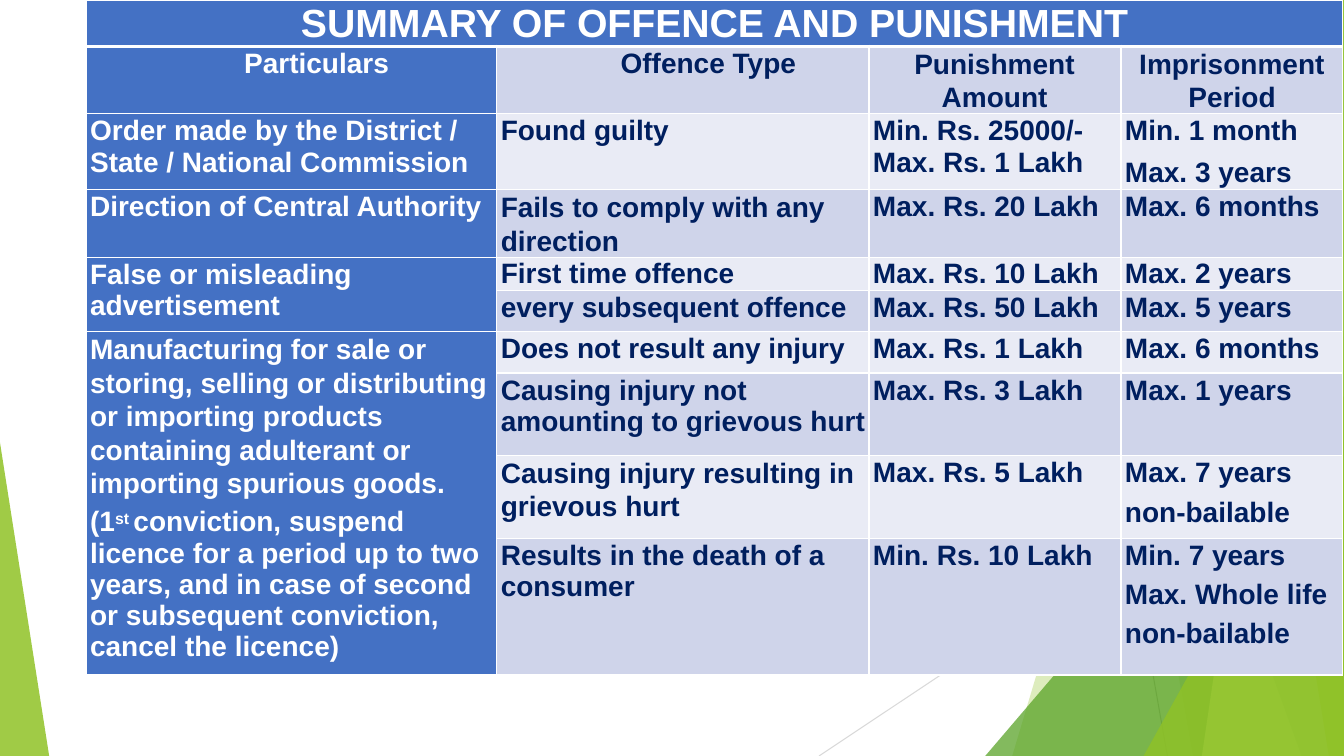
from dataclasses import dataclass

from pptx import Presentation
from pptx.dml.color import RGBColor
from pptx.enum.shapes import MSO_CONNECTOR, MSO_SHAPE
from pptx.enum.text import PP_ALIGN
from pptx.oxml.ns import qn
from pptx.util import Cm, Pt
from lxml.etree import SubElement

WHITE = RGBColor(0xFF, 0xFF, 0xFF)
BLUE = RGBColor(0x44, 0x71, 0xC4)
NAVY = RGBColor(0x00, 0x1F, 0x5F)
BAND_DARK = RGBColor(0xCF, 0xD4, 0xEA)
BAND_LIGHT = RGBColor(0xE9, 0xEB, 0xF5)
LIME = RGBColor(0x90, 0xC2, 0x26)
GREEN = RGBColor(0x54, 0xA0, 0x21)
FOREST = RGBColor(0x3F, 0x78, 0x19)
PALE_LIME = RGBColor(0xC0, 0xE4, 0x74)
GREY = RGBColor(0xBF, 0xBF, 0xBF)
LIGHT_GREY = RGBColor(0xD9, 0xD9, 0xD9)

SLIDE_WIDTH, SLIDE_HEIGHT = 33.87, 19.05
COLUMNS = (10.35, 9.38, 6.35, 5.59)
ROWS = (1.17, 1.7, 1.91, 1.7, 0.84, 1.04, 1.04, 2.08, 2.08, 3.45)
MERGES = ((0, 0, 0, 3), (4, 0, 5, 0), (6, 0, 9, 0))


@dataclass
class Line:
    text: str
    pitch: object = Pt(23.5)
    before: float = 0
    left: float = 0.1
    first: float = 0
    align: object = PP_ALIGN.LEFT
    size: float = 20
    raised: str = ""
    rest: str = ""


CONTENT = (
    ((Line("SUMMARY OF OFFENCE AND PUNISHMENT", Pt(32.4), left=0,
           align=PP_ALIGN.CENTER, size=28),), (), (), ()),
    ((Line("Particulars", left=1.27, align=PP_ALIGN.CENTER),),
     (Line("Offence Type", left=3.12),),
     (Line("Punishment Amount", Pt(24), left=1.83, first=-0.69),),
     (Line("Imprisonment Period", Pt(24), left=1.7, first=-1.24),)),
    ((Line("Order made by the District /"), Line("State / National Commission", 1.0)),
     (Line("Found guilty"),),
     (Line("Min. Rs. 25000/-"), Line("Max. Rs. 1 Lakh", 1.0)),
     (Line("Min. 1 month"), Line("Max. 3 years", before=6))),
    ((Line("Direction of Central Authority"),),
     (Line("Fails to comply with any direction", Pt(24)),),
     (Line("Max. Rs. 20 Lakh"),),
     (Line("Max. 6 months"),)),
    ((Line("False or misleading"), Line("advertisement", 1.0)),
     (Line("First time offence", Pt(23)),),
     (Line("Max. Rs. 10 Lakh", Pt(23)),),
     (Line("Max. 2 years", Pt(23)),)),
    ((), (Line("every subsequent offence"),), (Line("Max. Rs. 50 Lakh"),),
     (Line("Max. 5 years"),)),
    ((Line("Manufacturing for sale or storing, selling or distributing "
           "or importing products", Pt(24)),
      Line("containing adulterant or importing spurious goods.", Pt(24)),
      Line("(1", 1.0, before=4.7, raised="st ",
           rest="conviction, suspend licence for a period up to two years, and in case "
                "of second or subsequent conviction, cancel the licence)")),
     (Line("Does not result any injury"),),
     (Line("Max. Rs. 1 Lakh"),),
     (Line("Max. 6 months"),)),
    ((), (Line("Causing injury not"), Line("amounting to grievous hurt", 1.0)),
     (Line("Max. Rs. 3 Lakh"),), (Line("Max. 1 years"),)),
    ((), (Line("Causing injury resulting in grievous hurt", Pt(24)),),
     (Line("Max. Rs. 5 Lakh"),),
     (Line("Max. 7 years"), Line("non-bailable", 1.0, before=6))),
    ((), (Line("Results in the death of a"), Line("consumer", 1.0)),
     (Line("Min. Rs. 10 Lakh"),),
     (Line("Min. 7 years"), Line("Max. Whole life non-bailable", 1.25))),
)


def paint(shape, colour, opacity=100):
    shape.shadow.inherit = False
    shape.fill.solid()
    shape.fill.fore_color.rgb = colour
    shape.line.fill.background()
    if opacity < 100:
        tint = shape._element.spPr.find(".//" + qn("a:srgbClr"))
        SubElement(tint, qn("a:alpha")).set("val", str(opacity * 1000))


def add_triangle(page, left, top, width, height, apex, colour, opacity):
    triangle = page.shapes.add_shape(MSO_SHAPE.ISOSCELES_TRIANGLE, Cm(left), Cm(top),
                                     Cm(width), Cm(height))
    triangle.adjustments[0] = apex
    paint(triangle, colour, opacity)


def add_slab(page, right, top, height, upper, lower, colour, opacity):
    bottom = Cm(top + height)
    outline = page.shapes.build_freeform(Cm(right - upper), Cm(top))
    outline.add_line_segments([(Cm(right), Cm(top)), (Cm(right), bottom),
                               (Cm(right - lower), bottom)])
    paint(outline.convert_to_shape(), colour, opacity)


def add_hairline(page, start, end, colour):
    hairline = page.shapes.add_connector(MSO_CONNECTOR.STRAIGHT, *map(Cm, start + end))
    hairline.line.color.rgb = colour
    hairline.line.width = Pt(0.75)
    SubElement(hairline._element.spPr, qn("a:effectLst"))


def draw_facets(page, left, top, width, height):
    right, bottom = left + width, top + height
    add_hairline(page, (right - 7.82, top), (right - 4.45, bottom), GREY)
    add_hairline(page, (right, top + 10.24), (right - 13.23, bottom), LIGHT_GREY)
    facets = (
        ("slab", 2.67, 8.36, LIME, 30),
        ("slab", 7.19, 3.81, LIME, 20),
        ("triangle", 9.04, 10.59, GREEN, 72),
        ("slab", 7.92, 1.07, FOREST, 70),
        ("slab", 0.76, 3.58, PALE_LIME, 70),
        ("slab", 3.48, 0.38, LIME, 65),
        ("triangle", 5.05, 9.07, LIME, 80),
    )
    for kind, first, second, colour, opacity in facets:
        if kind == "slab":
            add_slab(page, right, top, height, first, second, colour, opacity)
        else:
            add_triangle(page, right - first, bottom - second, first, second, 1,
                         colour, opacity)
    add_triangle(page, left, bottom - 7.9, 1.24, 7.9, 0, LIME, 85)


def add_span(para, text, size, colour, baseline=0):
    span = para.add_run()
    span.text = text
    span.font.name = "Arial"
    span.font.size = Pt(size)
    span.font.bold = True
    span.font.color.rgb = colour
    if baseline:
        span._r.get_or_add_rPr().set("baseline", str(baseline * 1000))


def fill_para(para, line, colour):
    para.alignment = line.align
    para.line_spacing = line.pitch
    para.space_before = Pt(line.before)
    settings = para._p.get_or_add_pPr()
    settings.set("marL", str(Cm(line.left)))
    settings.set("indent", str(Cm(line.first)))
    add_span(para, line.text, line.size, colour)
    if line.raised:
        add_span(para, line.raised, 19.5, colour, 26)
        add_span(para, line.rest, line.size, colour)


def add_borders(cell, row, column):
    widths = {
        "lnL": 1,
        "lnR": 0.5 if row == 0 or column == len(COLUMNS) - 1 else 1,
        "lnT": {0: 0.5, 1: 3}.get(row, 1),
        "lnB": 3 if row == 0 else 1,
    }
    settings = cell._tc.get_or_add_tcPr()
    for side, width in widths.items():
        edge = SubElement(settings, qn("a:" + side), w=str(Pt(width)))
        paint_fill = SubElement(edge, qn("a:solidFill"))
        SubElement(paint_fill, qn("a:srgbClr"), val=str(WHITE))


def format_cell(cell, row, column, lines):
    heading = row == 0 or column == 0
    cell.margin_left = cell.margin_right = cell.margin_top = cell.margin_bottom = 0
    add_borders(cell, row, column)
    cell.fill.solid()
    cell.fill.fore_color.rgb = BLUE if heading else BAND_DARK if row % 2 else BAND_LIGHT
    for index, line in enumerate(lines):
        frame = cell.text_frame
        para = frame.add_paragraph() if index else frame.paragraphs[0]
        fill_para(para, line, WHITE if heading else NAVY)


def draw_summary(page, left, top, width, height):
    bar = page.shapes.add_shape(MSO_SHAPE.RECTANGLE, Cm(left), Cm(top), Cm(width), Cm(1.14))
    paint(bar, BLUE)
    box = page.shapes.add_table(len(ROWS), len(COLUMNS), Cm(left), Cm(top),
                                Cm(width), Cm(height))
    table = box.table
    table.first_row = table.horz_banding = False
    for column, size in zip(table.columns, COLUMNS):
        column.width = Cm(size)
    for row, size in zip(table.rows, ROWS):
        row.height = Cm(size)
    for row, cells in enumerate(CONTENT):
        for column, lines in enumerate(cells):
            format_cell(table.cell(row, column), row, column, lines)
    for first_row, first_column, last_row, last_column in MERGES:
        table.cell(first_row, first_column).merge(table.cell(last_row, last_column))


def main():
    deck = Presentation()
    deck.slide_width, deck.slide_height = Cm(SLIDE_WIDTH), Cm(SLIDE_HEIGHT)
    page = deck.slides.add_slide(deck.slide_layouts[6])
    draw_facets(page, 0, 0, SLIDE_WIDTH, SLIDE_HEIGHT)
    draw_summary(page, 2.17, 0, sum(COLUMNS), sum(ROWS))
    deck.save("out.pptx")


if __name__ == "__main__":
    main()
